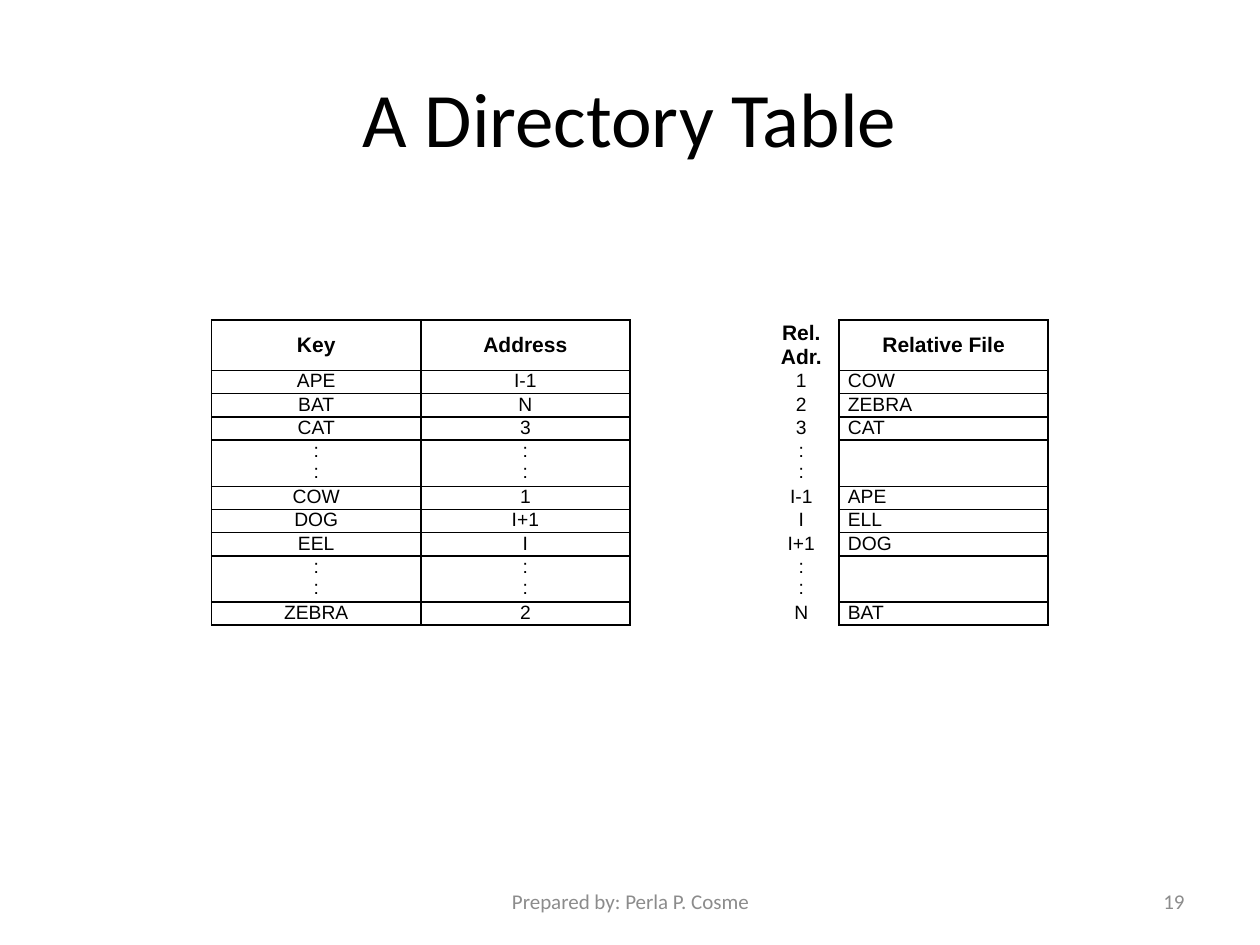
from lxml import etree
from pptx import Presentation, util as u
from pptx.dml.color import RGBColor
from pptx.enum import text as t
from pptx.oxml.ns import qn

CENTER, RIGHT, JUST = t.PP_ALIGN.CENTER, t.PP_ALIGN.RIGHT, t.PP_ALIGN.JUSTIFY


def write(frame, words, size, font="Calibri", color="000000", bold=False, align=CENTER):
    """Fill a text frame, one paragraph per line; empty lines keep the size."""
    frame.word_wrap = True
    frame.text = words
    for par in frame.paragraphs:
        par.alignment = align
        for run in par.runs:
            run.font.name, run.font.size, run.font.bold = font, u.Pt(size), bold
            run.font.color.rgb = RGBColor.from_string(color)
        if not par.runs:
            etree.SubElement(par._p, qn("a:endParaRPr"), sz=str(size * 100))


def border(cell):
    """Draw a black 1 pt line on all four sides."""
    props = cell._tc.get_or_add_tcPr()
    for side in ("lnL", "lnR", "lnT", "lnB"):
        line = etree.SubElement(props, qn(f"a:{side}"), w=str(u.Pt(1)))
        fill = etree.SubElement(line, qn("a:solidFill"))
        etree.SubElement(fill, qn("a:srgbClr"), val="000000")


deck = Presentation()
deck.slide_width, deck.slide_height = u.Inches(10), u.Inches(7.5)
slide = deck.slides.add_slide(deck.slide_layouts[6])

labels = [
    ("A Directory Table", (0.5, 0.3, 9, 1.25), 44, "000000", CENTER),
    ("Prepared by: Perla P. Cosme", (3.42, 6.95, 3.17, 0.4), 12, "8C8C8C", CENTER),
    ("19", (7.17, 6.95, 2.33, 0.4), 12, "8C8C8C", RIGHT),
]
for words, box, size, color, align in labels:
    frame = slide.shapes.add_textbox(*map(u.Inches, box)).text_frame
    frame.vertical_anchor = t.MSO_ANCHOR.MIDDLE
    write(frame, words, size, color=color, align=align)

# Key, address, gap, relative address, relative file
dots = (":\n:", ":\n:", "", ":\n:", "")
rows = [
    ("Key", "Address", "", "Rel. Adr.", "Relative File"),
    ("APE", "I-1", "", "1", "COW"),
    ("BAT", "N", "", "2", "ZEBRA"),
    ("CAT", "3", "", "3", "CAT"),
    dots,
    ("COW", "1", "", "I-1", "APE"),
    ("DOG", "I+1", "", "I", "ELL"),
    ("EEL", "I", "", "I+1", "DOG"),
    dots,
    ("ZEBRA", "2", "", "N", "BAT"),
]
widths = [1.66, 1.66, 1.06, 0.6, 1.66]
boxed = (0, 1, 4)
heights = [0.37 if r == 0 else 0.34 if row is dots else 0.17 for r, row in enumerate(rows)]

place = map(u.Inches, (1.68, 2.54, sum(widths), sum(heights)))
table = slide.shapes.add_table(len(rows), len(widths), *place).table
table.first_row = table.horz_banding = False
# "No Style, No Grid"
table._tbl.tblPr.find(qn("a:tableStyleId")).text = "{2D5ABB26-0587-4C30-8999-92F81FD0307C}"
for c, width in enumerate(widths):
    table.columns[c].width = u.Inches(width)

for r, row in enumerate(rows):
    table.rows[r].height = u.Inches(heights[r])
    head = r == 0
    for c, words in enumerate(row):
        cell = table.cell(r, c)
        cell.margin_left = cell.margin_right = u.Inches(0.07)
        cell.margin_top = cell.margin_bottom = 0
        cell.vertical_anchor = t.MSO_ANCHOR.MIDDLE if head else t.MSO_ANCHOR.TOP
        if c in boxed:
            border(cell)
        cell.fill.background()
        write(cell.text_frame, words, 12 if head else 11, font="Arial", bold=head,
              align=JUST if c == 4 and not head else CENTER)

deck.save("out.pptx")
